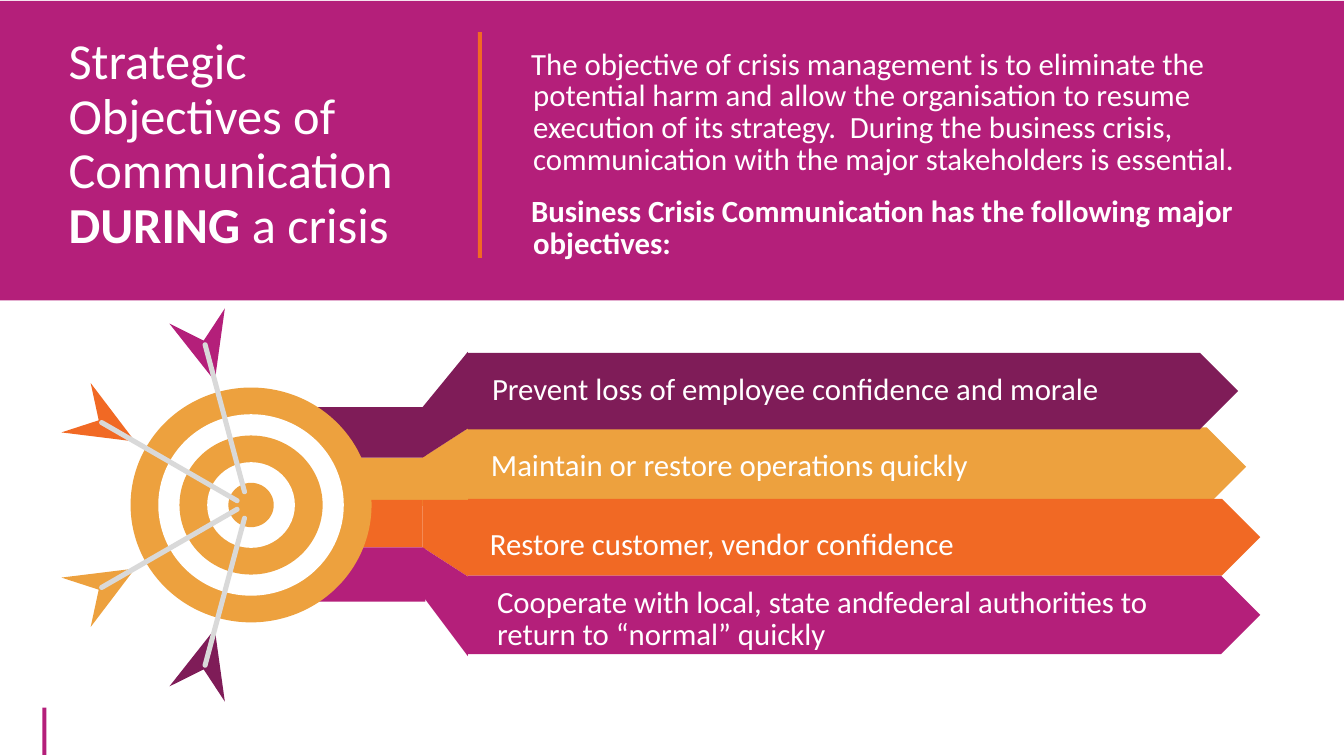
from dataclasses import dataclass

from pptx import Presentation
from pptx.dml.color import RGBColor
from pptx.enum.shapes import MSO_SHAPE
from pptx.enum.text import MSO_ANCHOR, PP_ALIGN
from pptx.util import Inches, Pt

RECT, OVAL = MSO_SHAPE.RECTANGLE, MSO_SHAPE.OVAL
RIBBON, ROUNDED = MSO_SHAPE.PENTAGON, MSO_SHAPE.ROUNDED_RECTANGLE
TOP, LEFT = MSO_ANCHOR.TOP, PP_ALIGN.LEFT


@dataclass(frozen=True)
class Theme:
    magenta: str = "B41F7A"
    orange: str = "F16924"
    amber: str = "EDA13E"
    plum: str = "7F1C58"
    grey: str = "D9D9D9"
    white: str = "FFFFFF"
    font: str = "Calibri"
    title_size: int = 36
    body_size: int = 22


THEME = Theme()

# Runs are (text, bold)
TITLE = [("Strategic Objectives of Communication ", False), ("DURING", True), (" a crisis", False)]
INTRO = [
    [("The objective of crisis management is to eliminate the potential harm and allow "
      "the organisation to resume execution of its strategy.  During the business crisis, "
      "communication with the major stakeholders is essential.", False)],
    [("Business Crisis Communication has the following major objectives:", True)],
]

# Back to front: each ribbon runs from the target (tail) through a fold to its plate.
# Boxes are left, top, width, height; fold sides are the top and bottom at each end.
OBJECTIVES = [
    dict(text="Maintain or restore operations quickly", color=THEME.amber,
         label=(4.78, 4.44, 6.47, 0.4), plate=(4.63, 4.24, 7.73, 0.78),
         tail=(4.54, 1.71, 0.48), fold_in=(4.54, 5.02), fold_out=(4.25, 5.02)),
    dict(text="Restore customer, vendor confidence", color=THEME.orange,
         label=(4.77, 5.22, 6.47, 0.4), plate=(4.64, 4.95, 7.86, 0.76),
         tail=(4.96, 1.7, 0.47), fold_in=(4.96, 5.43), fold_out=(4.96, 5.72)),
    dict(text="Cooperate with local, state andfederal authorities to return to “normal” quickly",
         color=THEME.magenta, label=(4.84, 5.8, 7.2, 0.71), plate=(4.64, 5.71, 7.86, 0.78),
         tail=(5.43, 1.73, 0.54), fold_in=(5.43, 5.91), fold_out=(5.72, 6.51)),
    dict(text="Prevent loss of employee confidence and morale", color=THEME.plum,
         label=(4.79, 3.68, 6.94, 0.4), plate=(4.63, 3.5, 7.65, 0.76),
         tail=(4.04, 1.75, 0.5), fold_in=(4.04, 4.54), fold_out=(3.49, 4.25)),
]
FOLD_LEFT, FOLD_RIGHT = 4.19, 4.64

TARGET_X, TARGET_Y = 2.49, 5.01
RINGS = [(2.39, 2.33), (1.84, 1.8), (1.42, 1.38), (0.87, 0.85), (0.45, 0.44)]

# Upper darts; the lower ones mirror them across the middle of the target
DARTS = [
    dict(flight=[(1.68, 3.21), (2.02, 3.38), (2.23, 3.06), (2.13, 3.78)],
         shaft=(2.23, 4.15), length=1.56, angle=75, colors=(THEME.magenta, THEME.plum)),
    dict(flight=[(0.61, 4.29), (0.98, 4.17), (0.9, 3.8), (1.34, 4.38)],
         shaft=(1.68, 4.58), length=1.6, angle=30, colors=(THEME.orange, THEME.amber)),
]
SHAFT_WIDTH = 0.05


def paint(shape, color):
    shape.shadow.inherit = False
    shape.fill.solid()
    shape.fill.fore_color.rgb = RGBColor.from_string(color)
    shape.line.fill.background()
    return shape


def add_block(slide, kind, box, color):
    return paint(slide.shapes.add_shape(kind, *map(Inches, box)), color)


def add_centred(slide, kind, x, y, width, height, color):
    return add_block(slide, kind, (x - width / 2, y - height / 2, width, height), color)


def add_outline(slide, points, color):
    start, *rest = [(Inches(x), Inches(y)) for x, y in points]
    builder = slide.shapes.build_freeform(*start)
    builder.add_line_segments(rest, close=True)
    return paint(builder.convert_to_shape(), color)


def add_runs(paragraph, runs, size):
    paragraph.alignment = LEFT
    for text, bold in runs:
        run = paragraph.add_run()
        run.text = text
        run.font.name = THEME.font
        run.font.size = Pt(size)
        run.font.bold = bold
        run.font.color.rgb = RGBColor.from_string(THEME.white)


def add_text(slide, box, paragraphs, spacing):
    frame = slide.shapes.add_textbox(*map(Inches, box)).text_frame
    frame.word_wrap = True
    frame.vertical_anchor = TOP
    for i, runs in enumerate(paragraphs):
        paragraph = frame.add_paragraph() if i else frame.paragraphs[0]
        paragraph.line_spacing = Pt(spacing)
        if i:
            paragraph.space_before = Pt(14.5)
        add_runs(paragraph, runs, THEME.body_size)
    return frame


def add_header(slide):
    add_block(slide, RECT, (0, 0.01, 13.33, 2.97), THEME.magenta)
    title = slide.shapes.title
    title.element.getparent().append(title.element)  # in front of the band
    title.left, title.top, title.width, title.height = map(Inches, (0.58, 0.31, 4.01, 2.37))
    frame = title.text_frame
    frame.word_wrap = True
    frame.vertical_anchor = TOP
    frame.paragraphs[0].line_spacing = 0.9
    add_runs(frame.paragraphs[0], TITLE, THEME.title_size)

    add_block(slide, RECT, (4.74, 0.32, 0.04, 2.24), THEME.orange)
    intro = add_text(slide, (5.17, 0.44, 7.72, 1.97), INTRO, 22.8)
    for paragraph in intro.paragraphs:
        properties = paragraph._p.get_or_add_pPr()
        properties.set("marL", str(Inches(0.02)))
        properties.set("indent", str(Inches(-0.02)))


def add_ribbons(slide):
    for item in OBJECTIVES:
        add_block(slide, RIBBON, item["plate"], item["color"])
    for item in OBJECTIVES:
        top, width, height = item["tail"]
        add_block(slide, RECT, (TARGET_X, top, width, height), item["color"])
    for item in OBJECTIVES:
        (in_top, in_bottom), (out_top, out_bottom) = item["fold_in"], item["fold_out"]
        add_outline(slide, [(FOLD_LEFT, in_top), (FOLD_RIGHT, out_top),
                            (FOLD_RIGHT, out_bottom), (FOLD_LEFT, in_bottom)], item["color"])


def add_target(slide):
    for i, (width, height) in enumerate(RINGS):
        color = THEME.white if i % 2 else THEME.amber
        add_centred(slide, OVAL, TARGET_X, TARGET_Y, width, height, color)
    for dart in DARTS:
        for mirrored, color in enumerate(dart["colors"]):
            def place(x, y):
                return x, 2 * TARGET_Y - y if mirrored else y

            add_outline(slide, [place(*point) for point in dart["flight"]], color)
            shaft = add_centred(slide, ROUNDED, *place(*dart["shaft"]),
                                dart["length"], SHAFT_WIDTH, THEME.grey)
            shaft.adjustments[0] = 0.5
            shaft.rotation = 360 - dart["angle"] if mirrored else dart["angle"]


def add_labels(slide):
    for item in OBJECTIVES:
        frame = add_text(slide, item["label"], [[(item["text"], False)]], 22.4)
        frame.margin_left = frame.margin_right = Inches(0.09)
        frame.margin_top = frame.margin_bottom = Inches(0.04)


def main():
    deck = Presentation()
    deck.slide_width, deck.slide_height = Inches(13.33), Inches(7.5)
    slide = deck.slides.add_slide(deck.slide_layouts[5])
    add_block(slide, RECT, (0.42, 7.02, 0.04, 0.47), THEME.magenta)
    add_header(slide)
    add_ribbons(slide)
    add_target(slide)
    add_labels(slide)
    deck.save("out.pptx")


if __name__ == "__main__":
    main()
